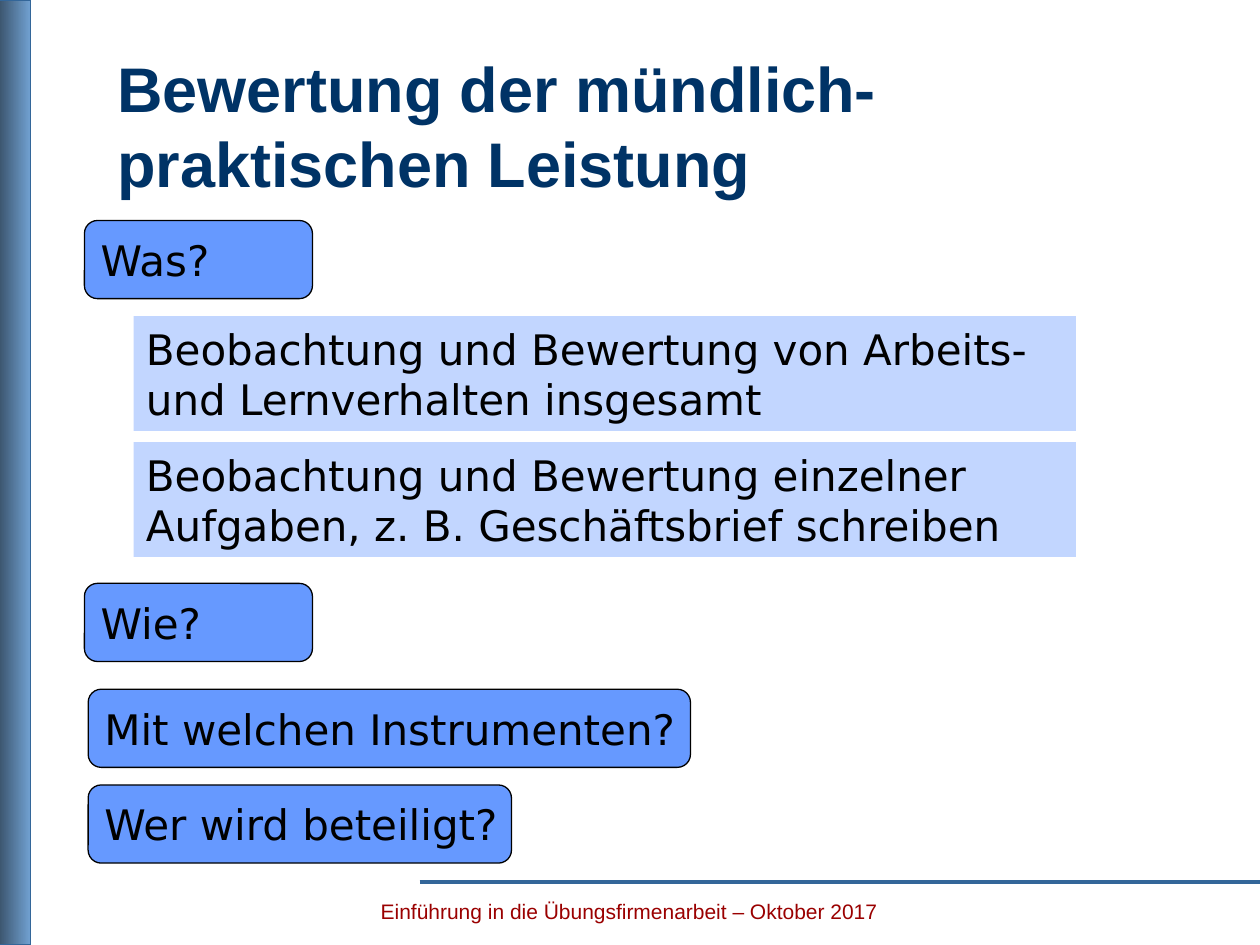
"""Build the slide on assessing oral and practical performance."""
from lxml.etree import SubElement
from pptx import Presentation
from pptx.dml.color import RGBColor
from pptx.enum.shapes import MSO_CONNECTOR, MSO_SHAPE
from pptx.enum.text import MSO_ANCHOR, PP_ALIGN
from pptx.oxml.ns import qn
from pptx.util import Inches, Pt

TITLE = "Bewertung der mündlich-praktischen Leistung"
FOOTER = "Einführung in die Übungsfirmenarbeit – Oktober 2017"
QUESTIONS = [
    ("Was?", 0.67, 1.75, 1.81),
    ("Wie?", 0.67, 4.63, 1.81),
    ("Mit welchen Instrumenten?", 0.7, 5.47, 4.78),
    ("Wer wird beteiligt?", 0.7, 6.23, 3.36),
]
ANSWERS = [
    "Beobachtung und Bewertung von Arbeits- und Lernverhalten insgesamt",
    "Beobachtung und Bewertung einzelner Aufgaben, z. B. Geschäftsbrief schreiben",
]
ANSWER_TOP, ANSWER_STEP = 2.51, 1
BLUE = "336699"


def color(value):
    """Turn a hex string into a colour."""
    return RGBColor.from_string(value)


def write(shape, text, size, font, hex_color, bold=False,
          align=PP_ALIGN.LEFT, anchor=MSO_ANCHOR.MIDDLE):
    """Fill a shape with one formatted paragraph."""
    frame = shape.text_frame
    frame.text = text
    frame.word_wrap = True
    frame.vertical_anchor = anchor
    paragraph = frame.paragraphs[0]
    paragraph.alignment = align
    for run in paragraph.runs:
        run.font.size = Pt(size)
        run.font.name = font
        run.font.bold = bold
        run.font.color.rgb = color(hex_color)


def add_box(slide, kind, box, fill=None, line=None):
    """Add a flat shape with optional fill and outline colours."""
    shape = slide.shapes.add_shape(kind, *map(Inches, box))
    shape.shadow.inherit = False
    if fill:
        shape.fill.solid()
        shape.fill.fore_color.rgb = color(fill)
    if line:
        shape.line.color.rgb = color(line)
        shape.line.width = Pt(0.75)
    else:
        shape.line.fill.background()
    return shape


def add_frame(slide):
    """Add the footer rule, the gradient side bar and the footer."""
    rule = slide.shapes.add_connector(
        MSO_CONNECTOR.STRAIGHT, Inches(3.33), Inches(7), Inches(10), Inches(7))
    rule.line.color.rgb = color(BLUE)
    rule.line.width = Pt(2.25)
    SubElement(rule._element.spPr, qn("a:effectLst"))

    bar = add_box(slide, MSO_SHAPE.RECTANGLE, (-0.04, 0, 0.28, 7.5), line=BLUE)
    bar.fill.gradient()
    bar.fill.gradient_angle = 0
    for stop, position, value in zip(
            bar.fill.gradient_stops, (0, 1), ("344A60", "70A0D0")):
        stop.position = position
        stop.color.rgb = color(value)

    footer = slide.shapes.add_textbox(*map(Inches, (0.83, 7, 8.33, 0.38)))
    write(footer, FOOTER, 12, "Arial", "9A0000",
          align=PP_ALIGN.CENTER, anchor=MSO_ANCHOR.BOTTOM)


def add_title(slide):
    """Place and format the title placeholder."""
    title = slide.shapes.title
    title.left, title.top, title.width, title.height = map(
        Inches, (0.83, 0.25, 9, 2.02))
    write(title, TITLE, 36, "Arial", "003366", bold=True, anchor=MSO_ANCHOR.TOP)
    frame = title.text_frame
    frame.margin_left = frame.margin_right = Inches(0.1)
    frame.margin_top = Inches(0.14)


def main():
    """Build and save the presentation."""
    presentation = Presentation()
    presentation.slide_width, presentation.slide_height = Inches(10), Inches(7.5)
    slide = presentation.slides.add_slide(presentation.slide_layouts[5])
    add_frame(slide)
    add_title(slide)
    for index, text in enumerate(ANSWERS):
        top = ANSWER_TOP + index * ANSWER_STEP
        shape = add_box(slide, MSO_SHAPE.RECTANGLE, (1.06, top, 7.48, 0.91), "C2D6FF")
        write(shape, text, 24, "DejaVu Sans", "000000")
    for text, left, top, width in QUESTIONS:
        shape = add_box(slide, MSO_SHAPE.ROUNDED_RECTANGLE,
                        (left, top, width, 0.62), "6699FF", "000000")
        write(shape, text, 24, "DejaVu Sans", "000000")
        shape.text_frame.margin_right = 0
    presentation.save("out.pptx")


if __name__ == "__main__":
    main()
